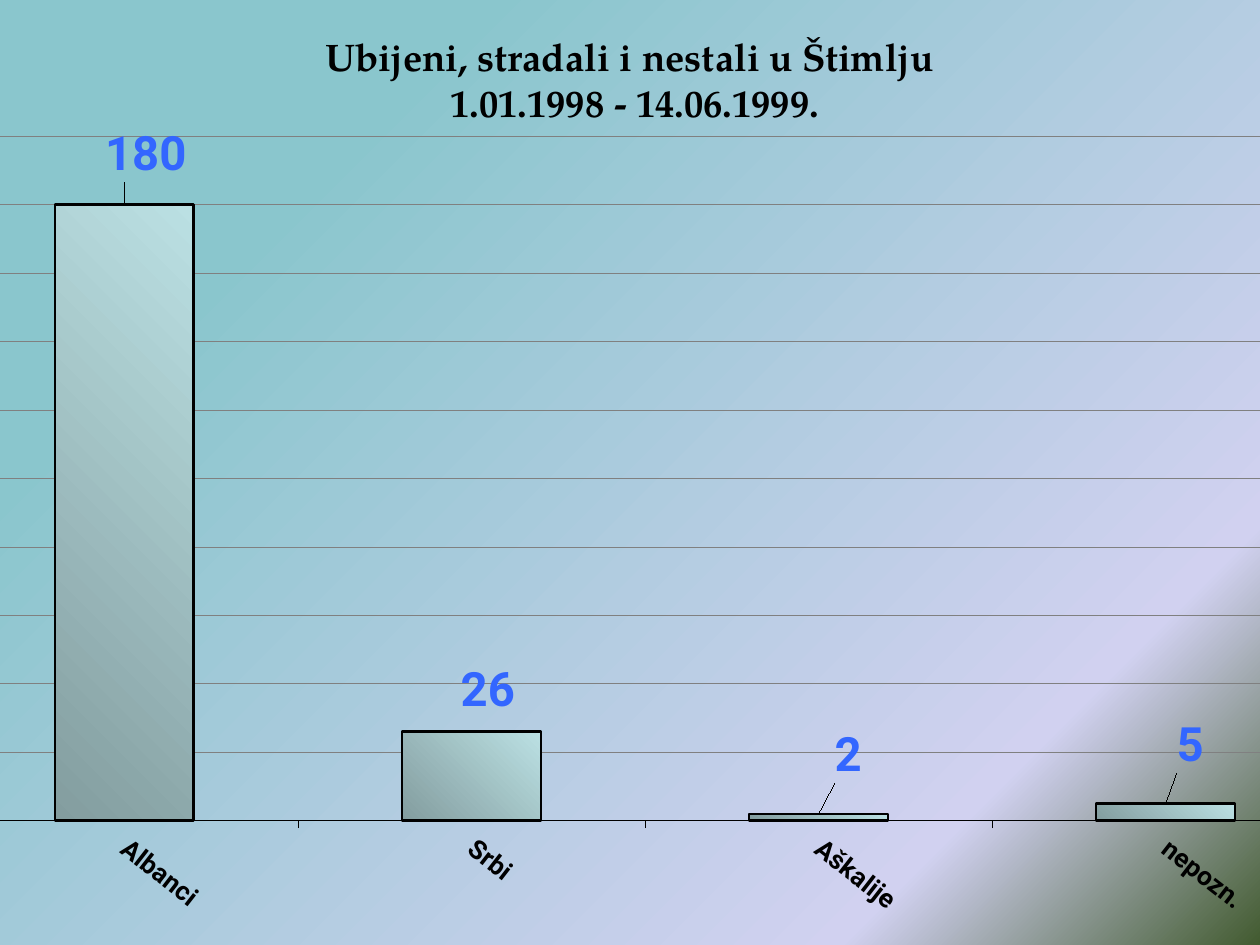
from copy import deepcopy

from lxml.etree import SubElement
from pptx import Presentation
from pptx.chart.data import CategoryChartData
from pptx.dml.color import RGBColor
from pptx.enum.chart import XL_CHART_TYPE as ChartType
from pptx.enum.chart import XL_LABEL_POSITION as LabelPosition
from pptx.enum.chart import XL_TICK_LABEL_POSITION as TickLabels
from pptx.enum.text import MSO_ANCHOR, PP_ALIGN
from pptx.oxml.ns import qn
from pptx.util import Inches, Pt

BLACK = RGBColor(0x00, 0x00, 0x00)
GREY = RGBColor(0x80, 0x80, 0x80)
LABEL_BLUE = RGBColor(0x33, 0x66, 0xFF)
TEAL = RGBColor(0x8A, 0xC6, 0xCD)
LAVENDER = RGBColor(0xD1, 0xD1, 0xF0)
MOSS = RGBColor(0x42, 0x5B, 0x30)
BAR_DARK = RGBColor(0x83, 0x9D, 0x9F)
BAR_LIGHT = RGBColor(0xBB, 0xE0, 0xE3)

TITLE_FONT = "TeX Gyre Pagella"
CHART_FONT = "Roboto"
TITLE = "Ubijeni, stradali i nestali u Štimlju\v 1.01.1998 - 14.06.1999."
VICTIMS = {"Albanci": 180, "Srbi": 26, "Aškalije": 2, "nepozn.": 5}
# Shift of each value label, as fractions of the chart's width and height
LABEL_SHIFTS = [(0.013, -0.02), (0.01, -0.01), (0.018, -0.03), (0.015, -0.03)]


def style_font(font, name, size, color, bold=True):
    font.name = name
    font.size = Pt(size)
    font.bold = bold
    font.color.rgb = color


def style_line(line, color, width):
    line.color.rgb = color
    line.width = Pt(width)


def set_stops(fill, stops, angle):
    fill.gradient_angle = angle
    for stop, (position, color) in zip(fill.gradient_stops, stops):
        stop.position = position
        stop.color.rgb = color


def paint_background(slide):
    fill = slide.background.fill
    fill.gradient()
    # The default gradient has two stops; this one needs a third
    stop_list = slide.element.find(".//" + qn("a:gsLst"))
    stop_list.append(deepcopy(stop_list[-1]))
    set_stops(fill, [(0.22, TEAL), (0.81, LAVENDER), (1, MOSS)], 315)


def add_layout(parent, index, **values):
    """Give a chart part a manual layout."""
    for old in parent.findall(qn("c:layout")):
        parent.remove(old)
    layout = SubElement(parent, qn("c:layout"))
    parent.insert(index, layout)
    manual = SubElement(layout, qn("c:manualLayout"))
    for tag, value in values.items():
        SubElement(manual, qn("c:" + tag)).set("val", str(value))


def write_title(slide):
    title = slide.shapes.title
    title.left, title.top = Inches(0), Inches(0)
    title.width, title.height = Inches(10), Inches(1.25)
    frame = title.text_frame
    frame.word_wrap = True
    frame.vertical_anchor = MSO_ANCHOR.MIDDLE
    para = frame.paragraphs[0]
    para.text = TITLE
    para.alignment = PP_ALIGN.CENTER
    style_font(para.font, TITLE_FONT, 22, BLACK)


def style_axes(chart):
    names = chart.category_axis
    names.tick_label_position = TickLabels.LOW
    style_font(names.tick_labels.font, CHART_FONT, 15, BLACK)
    style_line(names.format.line, BLACK, 0.37)
    body = names._element.find(qn("c:txPr")).find(qn("a:bodyPr"))
    body.set("rot", str(38 * 60000))
    body.set("vert", "horz")

    values = chart.value_axis
    values.minimum_scale, values.maximum_scale = 0, 200
    values.major_unit = 20
    values.tick_label_position = TickLabels.NONE
    style_line(values.format.line, BLACK, 0.37)
    style_line(values.major_gridlines.format.line, GREY, 0.37)


def style_bars(plot):
    plot.vary_by_categories = False
    plot.gap_width = 150
    series = plot.series[0]
    fill = series.format.fill
    fill.gradient()
    set_stops(fill, [(0, BAR_DARK), (1, BAR_LIGHT)], 45)
    style_line(series.format.line, BLACK, 1.5)

    labels = series.data_labels
    labels.show_value = True
    labels.number_format = "#,##0"
    labels.number_format_is_linked = False
    labels.position = LabelPosition.OUTSIDE_END
    style_font(labels.font, CHART_FONT, 27, LABEL_BLUE)
    for index, (across, down) in enumerate(LABEL_SHIFTS):
        label = series.points[index].data_label
        style_font(label.font, CHART_FONT, 27, LABEL_BLUE)
        label.position = LabelPosition.OUTSIDE_END
    for element, (across, down) in zip(
            labels._element.findall(qn("c:dLbl")), LABEL_SHIFTS):
        add_layout(element, 1, x=across, y=down)


def add_victims_chart(slide):
    data = CategoryChartData(number_format="#,##0")
    data.categories = list(VICTIMS)
    data.add_series("Series 1", list(VICTIMS.values()))
    frame = slide.shapes.add_chart(
        ChartType.COLUMN_CLUSTERED, Inches(-1.2), Inches(0.92),
        Inches(13.07), Inches(6.74), data)
    chart = frame.chart
    chart.has_title = False
    chart.has_legend = False
    style_font(chart.font, CHART_FONT, 27, BLACK)
    style_axes(chart)
    style_bars(chart.plots[0])
    plot_area = chart._chartSpace.find(".//" + qn("c:plotArea"))
    add_layout(plot_area, 0, layoutTarget="inner", xMode="edge", yMode="edge",
               x=0.062, y=0.024, w=0.843, h=0.806)
    # Keep the chart behind the title
    slide.shapes.title.element.addprevious(frame.element)


def main():
    deck = Presentation()
    deck.slide_width, deck.slide_height = Inches(10), Inches(7.5)
    slide = deck.slides.add_slide(deck.slide_layouts[5])
    paint_background(slide)
    write_title(slide)
    add_victims_chart(slide)
    deck.save("out.pptx")


if __name__ == "__main__":
    main()
